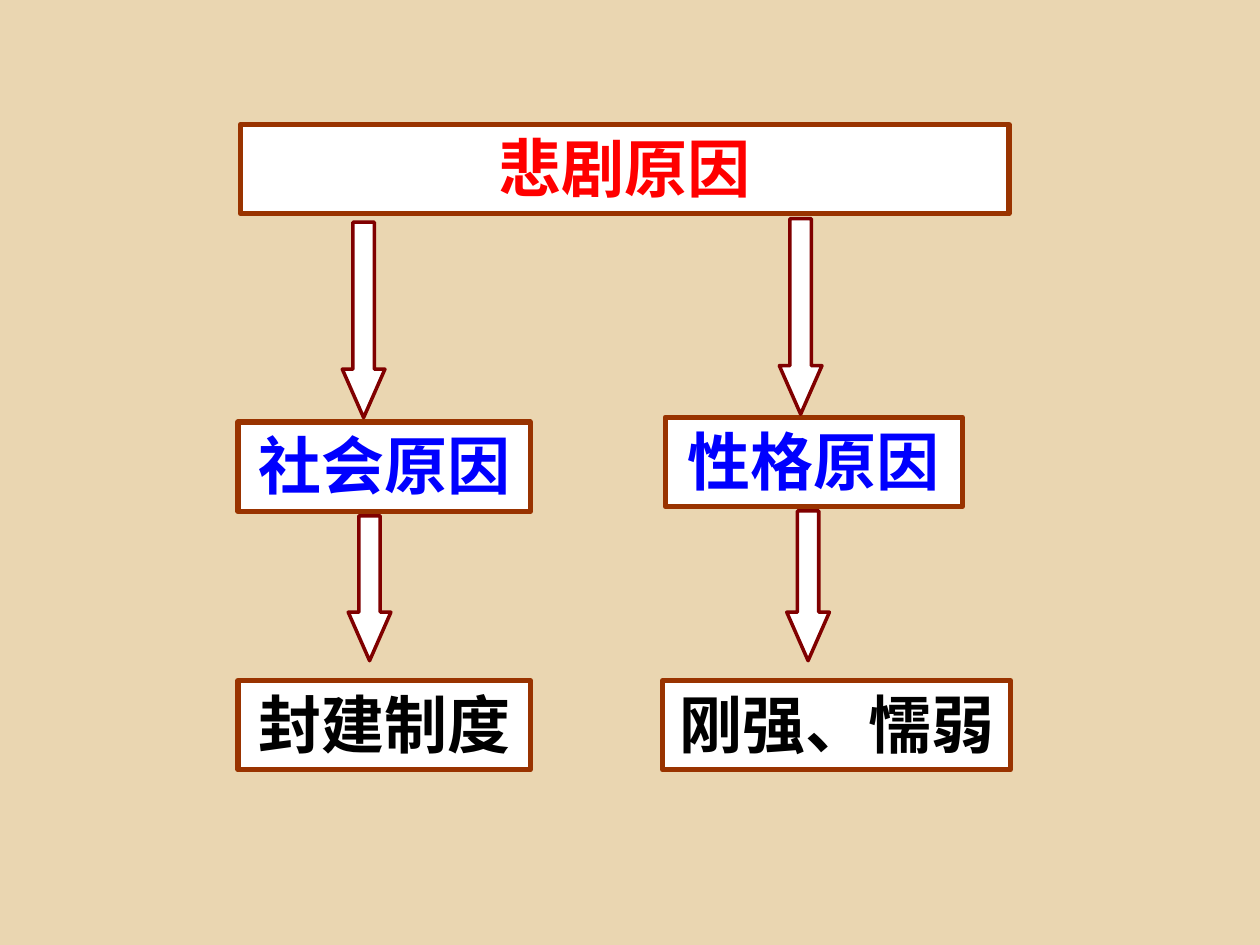
from pptx import Presentation
from pptx.dml.color import RGBColor
from pptx.enum.shapes import MSO_SHAPE as Shape
from pptx.enum.text import MSO_ANCHOR as Anchor, PP_ALIGN as Align
from pptx.oxml.ns import qn
from pptx.util import Cm, Pt
from lxml.etree import SubElement

THEME = {
    "background": "EAD6B1", "panel": "FFFFFF", "border": "993300", "arrow": "800000",
    "topic": "FF0000", "cause": "0000FF", "detail": "000000",
    "font": "Noto Sans CJK SC", "size": 36, "border_width": 3, "arrow_width": 2,
}
BOX_HEIGHT = 1.8
ARROW_THICKNESS = 0.86
ARROW_HEAD = 1.137

BOXES = [
    ("悲剧原因", "topic", 4.85, 2.51, 15.49),
    ("社会原因", "cause", 4.8, 8.51, 5.89),
    ("性格原因", "cause", 13.41, 8.41, 5.99),
    ("封建制度", "detail", 4.8, 13.72, 5.89),
    ("刚强、懦弱", "detail", 13.36, 13.72, 7.01),
]
ARROWS = [
    (7.33, 4.48, 3.94),
    (16.14, 4.41, 3.94),
    (7.45, 10.4, 2.92),
    (16.29, 10.3, 3.02),
]


def color(role):
    return RGBColor.from_string(THEME[role])


def add_panel(slide, kind, left, top, width, height, line, line_width):
    panel = slide.shapes.add_shape(kind, Cm(left), Cm(top), Cm(width), Cm(height))
    panel.shadow.inherit = False
    panel.fill.solid()
    panel.fill.fore_color.rgb = color("panel")
    panel.line.color.rgb = color(line)
    panel.line.width = Pt(THEME[line_width])
    return panel


def write_text(panel, text, *, role, bold=True, align=Align.CENTER):
    frame = panel.text_frame
    frame.word_wrap = True
    frame.vertical_anchor = Anchor.MIDDLE
    frame.margin_top, frame.margin_bottom = Cm(0), Cm(0.08)
    paragraph = frame.paragraphs[0]
    paragraph.alignment = align
    run = paragraph.add_run()
    run.text = text
    run.font.name = THEME["font"]
    run.font.size = Pt(THEME["size"])
    run.font.bold = bold
    run.font.color.rgb = color(role)
    SubElement(run.font._element, qn("a:ea")).set("typeface", THEME["font"])


def add_down_arrow(slide, center, top, length):
    left = center - length / 2
    unrotated_top = top + (length - ARROW_THICKNESS) / 2
    arrow = add_panel(slide, Shape.RIGHT_ARROW, left, unrotated_top, length,
                      ARROW_THICKNESS, "arrow", "arrow_width")
    arrow.rotation = 90
    arrow.adjustments[0] = 0.5
    arrow.adjustments[1] = ARROW_HEAD


def main():
    deck = Presentation()
    deck.slide_width, deck.slide_height = Cm(25.4), Cm(19.05)
    slide = deck.slides.add_slide(deck.slide_layouts[6])
    slide.background.fill.solid()
    slide.background.fill.fore_color.rgb = color("background")

    for text, role, left, top, width in BOXES:
        box = add_panel(slide, Shape.RECTANGLE, left, top, width, BOX_HEIGHT,
                        "border", "border_width")
        write_text(box, text, role=role)
    for center, top, length in ARROWS:
        add_down_arrow(slide, center, top, length)

    deck.save("out.pptx")


if __name__ == "__main__":
    main()
